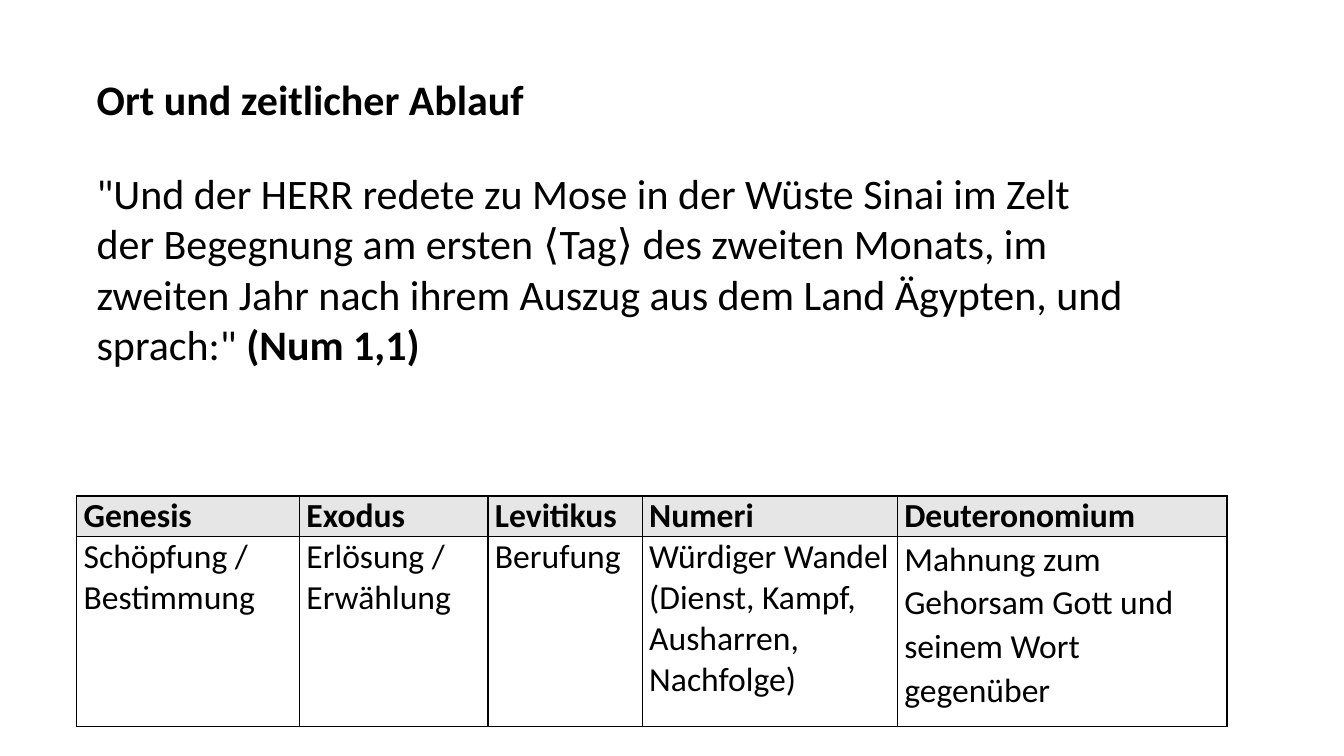
from dataclasses import dataclass

from lxml import etree
from pptx import Presentation
from pptx.dml.color import RGBColor
from pptx.enum.text import MSO_AUTO_SIZE
from pptx.oxml.ns import qn
from pptx.util import Inches, Pt

FIT_SHAPE = MSO_AUTO_SIZE.SHAPE_TO_FIT_TEXT
BLACK = RGBColor(0x00, 0x00, 0x00)
HEADER_GRAY = RGBColor(0xE7, 0xE6, 0xE6)
BODY_FONT = "Calibri"
BRACKET_FONT = "Cambria"
TEXT_SIZE = 30
TABLE_SIZE = 24
ROW_HEIGHTS = (0.4, 1.89)


@dataclass(frozen=True)
class Span:
    text: str
    font: str = BODY_FONT
    bold: bool = False


@dataclass(frozen=True)
class Book:
    name: str
    theme: str
    width: float


HEADING = [Span("Ort und zeitlicher Ablauf", bold=True)]
VERSE = [
    Span('"Und der HERR redete zu Mose in der Wüste Sinai im Zelt der Begegnung am ersten '),
    Span("⟨", BRACKET_FONT),
    Span("Tag"),
    Span("⟩", BRACKET_FONT),
    Span(' des zweiten Monats, im zweiten Jahr nach ihrem Auszug aus dem Land Ägypten, und sprach:" '),
    Span("(Num 1,1)", bold=True),
]
BOOKS = [
    Book("Genesis", "Schöpfung / Bestimmung", 2.21),
    Book("Exodus", "Erlösung / Erwählung", 1.87),
    Book("Levitikus", "Berufung", 1.53),
    Book("Numeri", "Würdiger Wandel (Dienst, Kampf, Ausharren, Nachfolge)", 2.53),
    Book("Deuteronomium", "Mahnung zum Gehorsam Gott und seinem Wort gegenüber", 3.27),
]


def add_span(para, span: Span, size: int) -> None:
    run = para.add_run()
    run.text = span.text
    run.font.name = span.font
    run.font.size = Pt(size)
    run.font.bold = span.bold
    run.font.color.rgb = BLACK


def add_text(page, spans: list[Span], left: float, top: float, width: float, height: float):
    box = page.shapes.add_textbox(Inches(left), Inches(top), Inches(width), Inches(height))
    box.text_frame.word_wrap = True
    box.text_frame.auto_size = FIT_SHAPE
    para = box.text_frame.paragraphs[0]
    for span in spans:
        add_span(para, span, TEXT_SIZE)
    return para


def add_borders(cell) -> None:
    properties = cell._tc.get_or_add_tcPr()
    for index, side in enumerate(("lnL", "lnR", "lnT", "lnB")):
        line = etree.Element(qn(f"a:{side}"), w=str(Pt(1)))
        fill = etree.SubElement(line, qn("a:solidFill"))
        etree.SubElement(fill, qn("a:srgbClr"), val=str(BLACK))
        properties.insert(index, line)


def fill_cell(cell, text: str, header: bool):
    cell.margin_left = cell.margin_right = Inches(0.07)
    cell.margin_top = cell.margin_bottom = 0
    if header:
        cell.fill.solid()
        cell.fill.fore_color.rgb = HEADER_GRAY
    else:
        cell.fill.background()
    add_borders(cell)
    para = cell.text_frame.paragraphs[0]
    add_span(para, Span(text, bold=header), TABLE_SIZE)
    return para


def add_book_table(page, left: float, top: float) -> None:
    width = sum(book.width for book in BOOKS)
    frame = page.shapes.add_table(
        len(ROW_HEIGHTS), len(BOOKS), Inches(left), Inches(top), Inches(width), Inches(sum(ROW_HEIGHTS))
    )
    table = frame.table
    table.first_row = False
    table.horz_banding = False
    for row, height in zip(table.rows, ROW_HEIGHTS):
        row.height = Inches(height)
    for index, book in enumerate(BOOKS):
        table.columns[index].width = Inches(book.width)
        fill_cell(table.cell(0, index), book.name, True)
        theme = fill_cell(table.cell(1, index), book.theme, False)
    theme.line_spacing = 1.07
    theme.space_after = Pt(8)


def main() -> None:
    deck = Presentation()
    deck.slide_width = Inches(13.33)
    deck.slide_height = Inches(7.5)
    page = deck.slides.add_slide(deck.slide_layouts[6])
    heading = add_text(page, HEADING, 0.86, 0.65, 5.52, 0.62)
    heading.line_spacing = 1.07
    heading.space_before = Pt(12)
    add_book_table(page, 0.76, 4.92)
    add_text(page, VERSE, 0.86, 1.61, 10.4, 2.12)
    deck.save("out.pptx")


if __name__ == "__main__":
    main()
